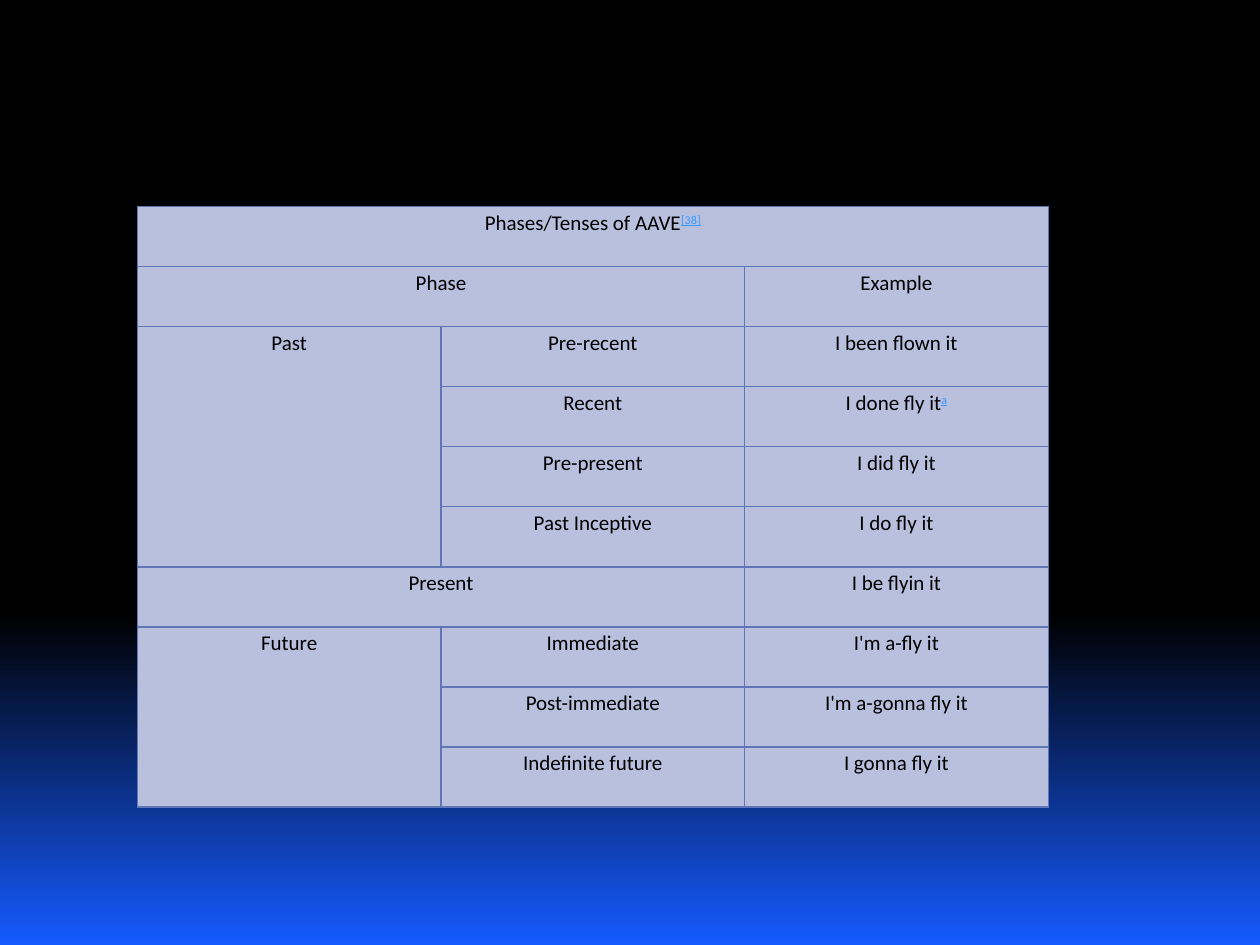
from copy import deepcopy
from lxml import etree
from pptx import Presentation
from pptx import util as u
from pptx.dml.color import RGBColor
from pptx.enum import text
from pptx.oxml.ns import qn

BLACK = RGBColor(0x00, 0x00, 0x00)
BLUE = RGBColor(0x15, 0x5A, 0xFF)
CELL = RGBColor(0xB9, 0xC0, 0xDE)
BORDER = RGBColor(0x60, 0x76, 0xB4)
LINK = RGBColor(0x33, 0x99, 0xFF)

ROWS = [
    ["Phases/Tenses of AAVE", "", ""],
    ["Phase", "", "Example"],
    ["Past", "Pre-recent", "I been flown it"],
    ["", "Recent", "I done fly it"],
    ["", "Pre-present", "I did fly it"],
    ["", "Past Inceptive", "I do fly it"],
    ["Present", "", "I be flyin it"],
    ["Future", "Immediate", "I'm a-fly it"],
    ["", "Post-immediate", "I'm a-gonna fly it"],
    ["", "Indefinite future", "I gonna fly it"],
]
MERGES = [((0, 0), (0, 2)), ((1, 0), (1, 1)), ((2, 0), (5, 0)),
          ((6, 0), (6, 1)), ((7, 0), (9, 0))]
NOTES = {(0, 0): "[38]", (3, 2): "a"}
COL_W, ROW_H = u.Inches(2.41), u.Pt(34.3)


def style_run(r, color):
    r.font.name = "Calibri"
    r.font.size = u.Pt(12)
    r.font.color.rgb = color


def add_borders(cell):
    tcPr = cell._tc.get_or_add_tcPr()
    for i, side in enumerate(("lnL", "lnR", "lnT", "lnB")):
        ln = etree.Element(qn("a:" + side), w=str(u.Pt(0.94)))
        fill = etree.SubElement(ln, qn("a:solidFill"))
        etree.SubElement(fill, qn("a:srgbClr"), val=str(BORDER))
        tcPr.insert(i, ln)


prs = Presentation()
prs.slide_width, prs.slide_height = u.Inches(10), u.Inches(7.5)
s = prs.slides.add_slide(prs.slide_layouts[6])

bg = s.background.fill
bg.gradient()
bg.gradient_angle = 270
gs_lst = s.background._cSld.find(".//" + qn("a:gsLst"))
gs_lst.insert(0, deepcopy(gs_lst[0]))
for stop, (pos, color) in zip(bg.gradient_stops, [(0, BLACK), (0.65, BLACK), (1, BLUE)]):
    stop.position = pos
    stop.color.rgb = color

tbl = s.shapes.add_table(len(ROWS), 3, u.Inches(1.09), u.Inches(1.64),
                         COL_W * 3, ROW_H * len(ROWS)).table
tbl.first_row = tbl.horz_banding = False
for col in tbl.columns:
    col.width = COL_W
for row in tbl.rows:
    row.height = ROW_H
for start, end in MERGES:
    tbl.cell(*start).merge(tbl.cell(*end))

for i, row in enumerate(ROWS):
    for j, words in enumerate(row):
        cell = tbl.cell(i, j)
        cell.fill.solid()
        cell.fill.fore_color.rgb = CELL
        add_borders(cell)
        cell.margin_left = cell.margin_right = u.Inches(0.07)
        cell.margin_top = cell.margin_bottom = 0
        if not words:
            continue
        p = cell.text_frame.paragraphs[0]
        p.text = words
        p.alignment = text.PP_ALIGN.CENTER
        p.line_spacing = 1.15
        style_run(p.runs[0], BLACK)
        if (i, j) in NOTES:
            r = p.add_run()
            r.text = NOTES[i, j]
            style_run(r, LINK)
            r.font.underline = True
            r.font._rPr.set("baseline", "30000")

prs.save("out.pptx")
